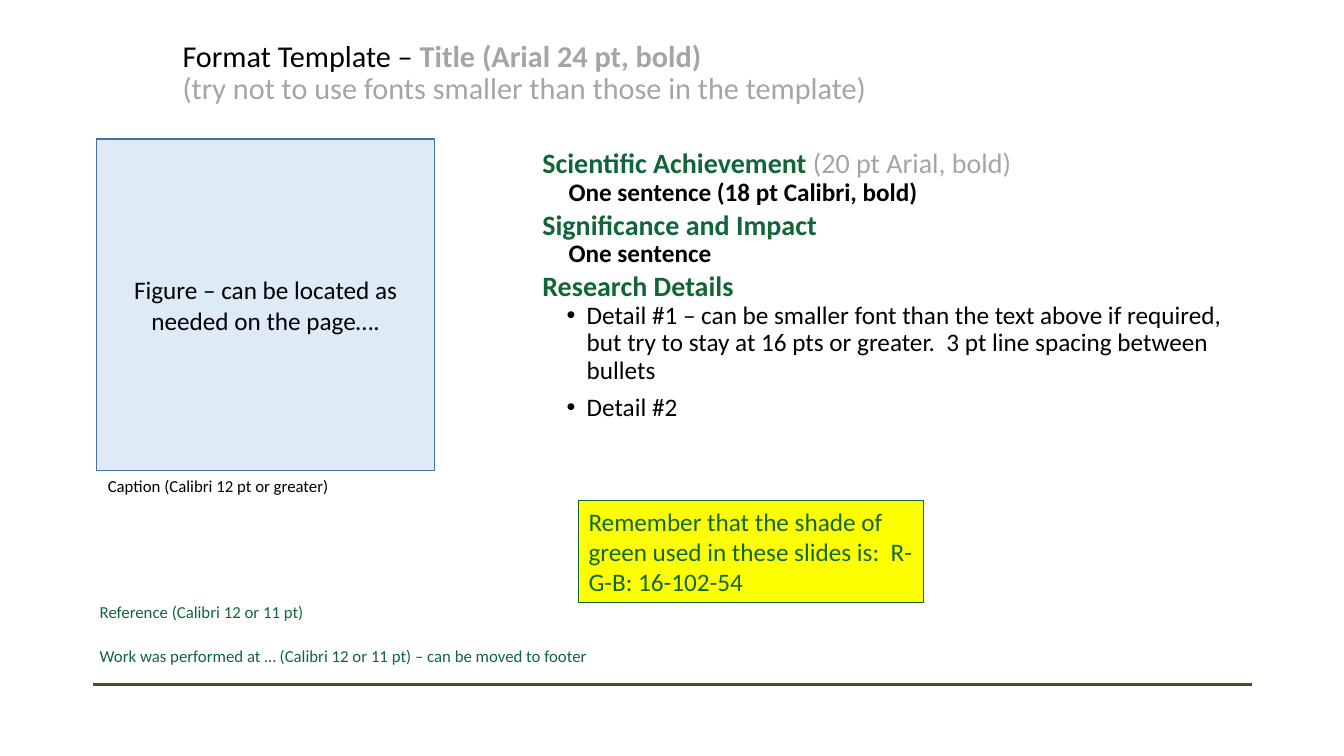
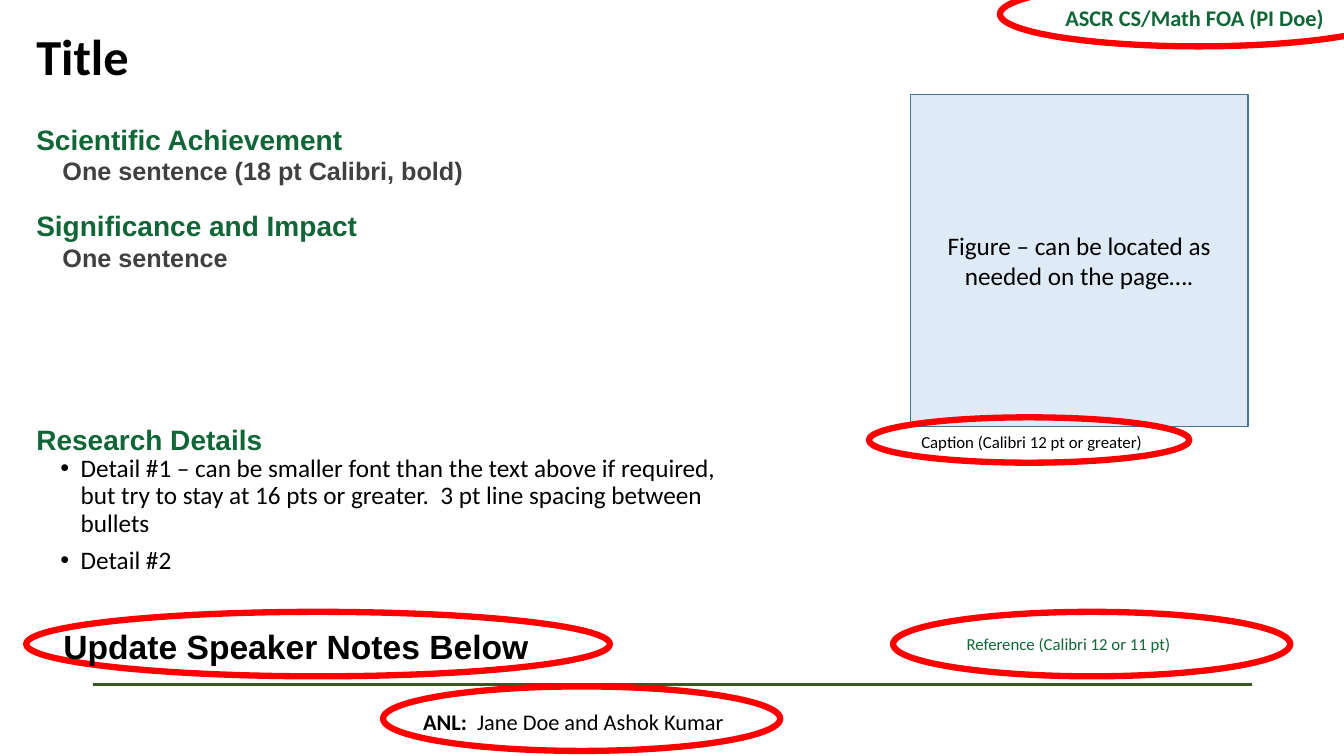
import dataclasses

import lxml.etree
import pptx
import pptx.dml.color
import pptx.enum.shapes
import pptx.enum.text
import pptx.oxml.ns
import pptx.util

WIDTH = pptx.util.Inches(13.33)
HEIGHT = pptx.util.Inches(7.5)

GREEN = "106636"
BLACK = "000000"
GRAY = "A5A5A5"
DARK_GRAY = "404040"
RED = "FF0000"
RULE_GREEN = "385723"
FIGURE_FILL = "DEEBF7"
FIGURE_LINE = "43739E"
YELLOW = "FFFF00"

ALIGN = pptx.enum.text.PP_ALIGN
ANCHOR = pptx.enum.text.MSO_ANCHOR
SHAPE = pptx.enum.shapes.MSO_SHAPE

FIGURE_SIZE = (25.13, 43.87)
NOTE_SIZE = (26.85, 4)
MARGIN = 1.95
RING_HEIGHT = 8.53
LOWER_RING_TOP = 80.93


@dataclasses.dataclass
class Words:
    text: str
    size: float = 18
    color: str = BLACK
    bold: bool = False
    font: str = "Calibri"


@dataclasses.dataclass
class Line:
    words: list
    align: int = ALIGN.LEFT
    level: int = 0
    margin: float = 0
    indent: float = 0
    bullet: str = ""
    spacing: float = 1
    before: float = 0
    after: float = 0


def color(value):
    return pptx.dml.color.RGBColor.from_string(value)


def box(left, top, width, height):
    return (int(WIDTH * left / 100), int(HEIGHT * top / 100),
            int(WIDTH * width / 100), int(HEIGHT * height / 100))


def set_bullet(paragraph, line):
    properties = paragraph._p.get_or_add_pPr()
    properties.set("marL", str(pptx.util.Inches(line.margin)))
    properties.set("indent", str(pptx.util.Inches(line.indent)))
    tag = "a:buChar" if line.bullet else "a:buNone"
    bullet = lxml.etree.SubElement(properties, pptx.oxml.ns.qn(tag))
    if line.bullet:
        bullet.set("char", line.bullet)


def write(shape, lines, anchor=ANCHOR.TOP):
    frame = shape.text_frame
    frame.word_wrap = True
    frame.auto_size = pptx.enum.text.MSO_AUTO_SIZE.NONE
    frame.vertical_anchor = anchor
    for index, line in enumerate(lines):
        paragraph = frame.add_paragraph() if index else frame.paragraphs[0]
        set_bullet(paragraph, line)
        paragraph.level = line.level
        paragraph.alignment = line.align
        paragraph.line_spacing = line.spacing
        paragraph.space_before = pptx.util.Pt(line.before)
        paragraph.space_after = pptx.util.Pt(line.after)
        for words in line.words:
            run = paragraph.add_run()
            run.text = words.text
            run.font.name = words.font
            run.font.size = pptx.util.Pt(words.size)
            run.font.bold = words.bold
            run.font.color.rgb = color(words.color)


def fill_placeholder(shape, bounds, lines, anchor=ANCHOR.TOP):
    shape.left, shape.top, shape.width, shape.height = box(*bounds)
    write(shape, lines, anchor)


def add_text(slide, bounds, lines, anchor=ANCHOR.TOP):
    write(slide.shapes.add_textbox(*box(*bounds)), lines, anchor)


def add_note(slide, left, top, text, shade=GREEN, width=NOTE_SIZE[0]):
    add_text(slide, (left, top, width, NOTE_SIZE[1]),
             [Line([Words(text, 12, shade)])])


def add_outline(slide, kind, bounds, line_color, line_width, fill=None):
    shape = slide.shapes.add_shape(kind, *box(*bounds))
    shape.shadow.inherit = False
    shape.line.color.rgb = color(line_color)
    shape.line.width = pptx.util.Pt(line_width)
    if fill:
        shape.fill.solid()
        shape.fill.fore_color.rgb = color(fill)
    else:
        shape.fill.background()
    return shape


def add_figure(slide, left, top):
    figure = add_outline(slide, SHAPE.RECTANGLE, (left, top, *FIGURE_SIZE),
                         FIGURE_LINE, 1, FIGURE_FILL)
    text = "Figure – can be located as needed on the page…."
    write(figure, [Line([Words(text)], ALIGN.CENTER)], ANCHOR.MIDDLE)
    add_note(slide, left + 0.08, top + FIGURE_SIZE[1],
             "Caption (Calibri 12 pt or greater)", BLACK)


def add_ring(slide, left, top, width=29.55, height=RING_HEIGHT):
    add_outline(slide, SHAPE.OVAL, (left, top, width, height), RED, 4.5)


def add_master_rule(presentation, slide):
    left, top, width, _ = box(6.9, 90.53, 86.25, 0)
    rule = slide.shapes.add_connector(
        pptx.enum.shapes.MSO_CONNECTOR.STRAIGHT, left, top, left + width, top)
    rule.line.color.rgb = color(RULE_GREEN)
    rule.line.width = pptx.util.Pt(2.25)
    lxml.etree.SubElement(rule.element.spPr, pptx.oxml.ns.qn("a:effectLst"))
    presentation.slide_master.shapes.element.append(rule.element)


def heading(text, font, spacing=1, before=0, extra=()):
    return Line([Words(text, 20, GREEN, True, font), *extra],
                spacing=spacing, before=before)


def sentence(text, font, shade, spacing=1):
    return Line([Words(text, 18, shade, True, font)],
                level=1, margin=0.26, spacing=spacing)


def achievement_lines(font, shade, spacing, gap, hint=()):
    return [
        heading("Scientific Achievement", font, spacing, extra=hint),
        sentence("One sentence (18 pt Calibri, bold)", font, shade, spacing),
        heading("Significance and Impact", font, spacing, gap),
        sentence("One sentence", font, shade, spacing),
    ]


def detail_lines(font, spacing, before):
    details = [
        "Detail #1 – can be smaller font than the text above if required, "
        "but try to stay at 16 pts or greater.  "
        "3 pt line spacing between bullets",
        "Detail #2",
    ]
    return [heading("Research Details", font, spacing, before)] + [
        Line([Words(text)], level=1, margin=0.44, indent=-0.2, bullet="•",
             spacing=0.9, before=4 * index, after=3)
        for index, text in enumerate(details)]


def build_format_slide(slide):
    title = [
        Line([Words("Format Template – ", 21.6),
              Words("Title (Arial 24 pt, bold)", 21.6, GRAY, True)],
             spacing=0.9),
        Line([Words("(try not to use fonts smaller than those in the template)",
                    21.6, GRAY)], spacing=0.9),
    ]
    fill_placeholder(slide.shapes.title, (12.83, 4.4, 75, 10.67),
                     title, ANCHOR.MIDDLE)
    hint = [Words(" (20 pt Arial, bold)", 20, GRAY)]
    fill_placeholder(slide.placeholders[1], (39.6, 19.07, 54.83, 47.6),
                     achievement_lines("Calibri", BLACK, 0.9, 3, hint)
                     + detail_lines("Calibri", 0.9, 3))
    add_figure(slide, 7.2, 18.4)
    add_note(slide, 6.68, 78.93, "Reference (Calibri 12 or 11 pt)")
    add_note(slide, 6.68, 84.8,
             "Work was performed at … (Calibri 12 or 11 pt) – "
             "can be moved to footer", width=45.6)
    reminder = add_outline(slide, SHAPE.RECTANGLE, (43.05, 66.27, 25.65, 13.47),
                           GREEN, 0.75, YELLOW)
    write(reminder, [Line([Words(
        "Remember that the shade of green used in these slides is:  "
        "R-G-B: 16-102-54", 18, GREEN)])])


def build_example_slide(slide):
    fill_placeholder(slide.shapes.title, (MARGIN, 0, 78.3, 15.73),
                     [Line([Words("Title", 36, bold=True)], spacing=0.9)],
                     ANCHOR.MIDDLE)
    fill_placeholder(slide.placeholders[1], (MARGIN, 15.47, 53.7, 40.93),
                     achievement_lines("Arial", DARK_GRAY, 1, 16))
    fill_placeholder(slide.placeholders[2], (MARGIN, 55.2, 53.7, 34.67),
                     detail_lines("Arial", 1, 0))
    add_text(slide, (74.4, -0.13, 24.83, 7.87),
             [Line([Words("ASCR CS/Math FOA (PI Doe)", 16, GREEN, True)],
                   ALIGN.RIGHT)])
    add_figure(slide, 67.73, 12.53)
    add_note(slide, 71.18, 83.2, "Reference (Calibri 12 or 11 pt)")
    add_text(slide, (30.75, 91.47, 29.18, RING_HEIGHT),
             [Line([Words("ANL:  ", 16, bold=True),
                    Words("Jane Doe and Ashok Kumar", 16)], spacing=0.9)],
             ANCHOR.MIDDLE)
    add_ring(slide, 66.45, LOWER_RING_TOP)
    add_ring(slide, 74.4, -2.4)
    add_ring(slide, MARGIN, LOWER_RING_TOP, 43.43)
    add_ring(slide, 64.65, 55.2, 23.85, 6)
    add_ring(slide, 28.5, 90.8)
    add_text(slide, (3.98, 82.13, 47.33, 6.67),
             [Line([Words("Update Speaker Notes Below", 24, bold=True,
                          font="Arial")])])


def main():
    presentation = pptx.Presentation()
    presentation.slide_width = WIDTH
    presentation.slide_height = HEIGHT
    layouts = presentation.slide_layouts
    format_slide = presentation.slides.add_slide(
        layouts.get_by_name("Title and Content"))
    add_master_rule(presentation, format_slide)
    build_format_slide(format_slide)
    build_example_slide(presentation.slides.add_slide(
        layouts.get_by_name("Two Content")))
    presentation.save("out.pptx")


if __name__ == "__main__":
    main()
